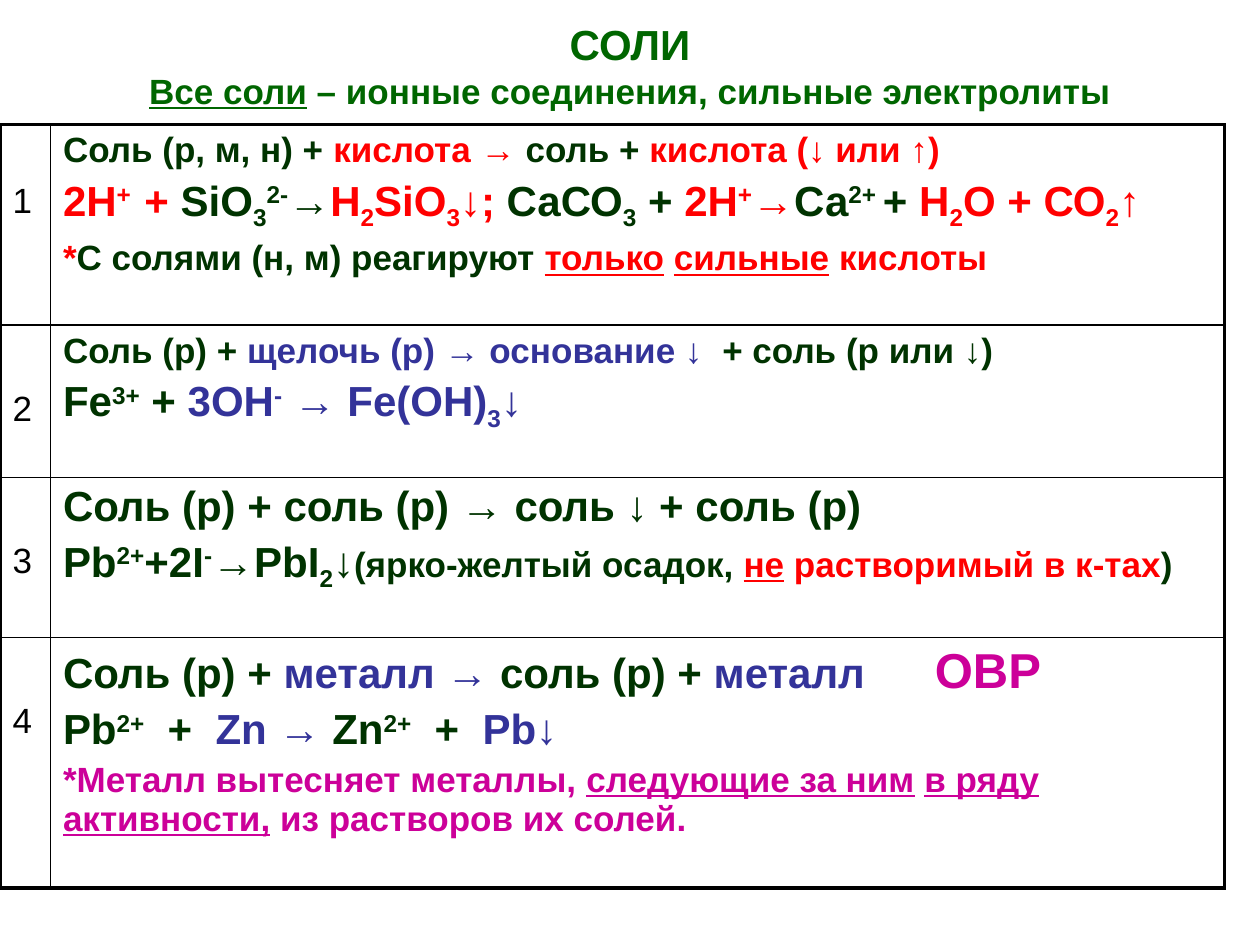
from lxml import etree
from pptx import Presentation
from pptx.dml.color import RGBColor
from pptx.enum.text import MSO_ANCHOR, MSO_AUTO_SIZE, PP_ALIGN
from pptx.oxml.ns import qn
from pptx.util import Inches, Pt

MIDDLE, CENTER, NO_AUTOFIT = MSO_ANCHOR.MIDDLE, PP_ALIGN.CENTER, MSO_AUTO_SIZE.NONE

THEME = {
    "font": "Arial",
    "colors": {"title": "006600", "salt": "003300", "acid": "FF0000",
               "metal": "333399", "redox": "CC0099", "black": "000000"},
    "sizes": {"body": 20, "formula": 24, "label": 28},
    "outer": 2.25,
    "inner": 1,
}
BASELINES = {"sub": "-25000", "sup": "30000"}

TITLE = [
    ("formula", [("СОЛИ", "title")]),
    ("body", [("Все соли", "title", "underline"), (" ", "metal"),
              ("– ионные соединения, сильные электролиты", "title")]),
]

REACTIONS = [
    [
        ("body", [("Соль (р, м, н) +", "salt"), (" кислота → ", "acid"),
                  ("соль +", "salt"), (" кислота (↓ или ↑)", "acid")]),
        ("formula", [("2H", "acid"), ("+  ", "acid", "sup"), ("+ ", "acid"),
                     ("SiO", "salt"), ("3", "salt", "sub"), ("2-", "salt", "sup"),
                     ("→", "salt"), ("H", "acid"), ("2", "acid", "sub"),
                     ("SiO", "acid"), ("3", "acid", "sub"), ("↓; ", "acid"),
                     ("СаСО", "salt"), ("3", "salt", "sub"), (" + ", "salt"),
                     ("2Н", "acid"), ("+", "acid", "sup"), ("→", "acid"),
                     ("Са", "salt"), ("2+ ", "salt", "sup"), ("+ ", "salt"),
                     ("Н", "acid"), ("2", "acid", "sub"), ("О + СО", "acid"),
                     ("2", "acid", "sub"), ("↑", "acid")]),
        ("body", [("*", "acid"), ("С солями (н, м) реагируют ", "salt"),
                  ("только", "acid", "underline"), (" ", "acid"),
                  ("сильные", "acid", "underline"), (" ", "metal"),
                  ("кислоты", "acid")]),
    ],
    [
        ("body", [("Соль (р) + ", "salt"), ("щелочь (р) → основание ↓  ", "metal"),
                  ("+ соль (р или ↓)", "salt")]),
        ("formula", [("Fe", "salt"), ("3+", "salt", "sup"), (" +", "salt"),
                     (" 3OH", "metal"), ("-", "metal", "sup"),
                     (" → Fe(OH)", "metal"), ("3", "metal", "sub"), ("↓", "metal")]),
    ],
    [
        ("formula", [("Соль (р) + соль (р) → соль ↓ + соль (р)", "salt")]),
        ("formula", [("Pb", "salt"), ("2+", "salt", "sup"), ("+2I", "salt"),
                     ("-", "salt", "sup"), ("→PbI", "salt"), ("2", "salt", "sub"),
                     ("↓", "salt"), ("(ярко-желтый осадок, ", "salt", "body"),
                     ("не", "acid", "body", "underline"),
                     (" растворимый в к-тах", "acid", "body"), (")", "salt", "body")]),
    ],
    [
        ("formula", [("Соль (р) + ", "salt"), ("металл → ", "metal"),
                     ("соль (р) + ", "salt"), ("металл\t", "metal"),
                     ("ОВР", "redox", "label")]),
        ("formula", [("Pb", "salt"), ("2+", "salt", "sup"), ("  +", "salt"),
                     ("  Zn → ", "metal"), ("Zn", "salt"), ("2+", "salt", "sup"),
                     ("  +", "salt"), ("  Pb↓", "metal")]),
        ("body", [("*Металл вытесняет металлы, ", "redox"),
                  ("следующие за ним", "redox", "underline"), (" ", "redox"),
                  ("в ряду", "redox", "underline"), (" ", "redox"),
                  ("активности,", "redox", "underline"),
                  (" из растворов их солей.", "redox")]),
    ],
]

COLUMN_WIDTHS = [0.4, 9.32]
ROW_HEIGHTS = [1.59, 1.21, 1.27, 1.99]
NUMBER_OFFSETS = [0.45, 0.51, 0.51, 0.51]
TABLE_LEFT, TABLE_TOP = 0, 0.99
LABEL_TAB = 6.92


def add_runs(paragraph, size, runs, bold=True):
    for text, color, *marks in runs:
        run = paragraph.add_run()
        run.text = text
        font = run.font
        run_size = next((mark for mark in marks if mark in THEME["sizes"]), size)
        font.size = Pt(THEME["sizes"][run_size])
        font.name = THEME["font"]
        font.bold = bold
        font.underline = "underline" in marks
        font.color.rgb = RGBColor.from_string(THEME["colors"][color])
        for mark in marks:
            if mark in BASELINES:
                font._element.set("baseline", BASELINES[mark])


def fill_cell(cell, lines, bold=True):
    frame = cell.text_frame
    for index, (size, runs) in enumerate(lines):
        paragraph = frame.add_paragraph() if index else frame.paragraphs[0]
        if index:
            paragraph.space_before = Pt(0.2 * THEME["sizes"][size])
        add_runs(paragraph, size, runs, bold)
        if any("\t" in text for text, *_ in runs):
            tabs = etree.SubElement(paragraph._p.get_or_add_pPr(), qn("a:tabLst"))
            etree.SubElement(tabs, qn("a:tab"), pos=str(Inches(LABEL_TAB)), algn="l")


def set_borders(cell, outer_edges):
    cell.fill.background()
    properties = cell._tc.get_or_add_tcPr()
    for index, edge in enumerate("LRTB"):
        width = THEME["outer"] if edge in outer_edges else THEME["inner"]
        line = etree.Element(qn(f"a:ln{edge}"), w=str(Pt(width)))
        fill = etree.SubElement(line, qn("a:solidFill"))
        etree.SubElement(fill, qn("a:srgbClr"), val=THEME["colors"]["black"])
        properties.insert(index, line)


def add_title(slide):
    title = slide.shapes.title
    title.left, title.top = Inches(0.5), Inches(0.3)
    title.width, title.height = Inches(9), Inches(0.77)
    frame = title.text_frame
    frame.word_wrap = True
    frame.auto_size = NO_AUTOFIT
    frame.vertical_anchor = MIDDLE
    frame.margin_top, frame.margin_bottom = Inches(0.05), Inches(0.39)
    paragraph = frame.paragraphs[0]
    paragraph.alignment = CENTER
    for index, (size, runs) in enumerate(TITLE):
        if index:
            paragraph.add_line_break()
        add_runs(paragraph, size, runs)


def add_reaction_table(slide):
    last_row = len(REACTIONS) - 1
    table = slide.shapes.add_table(
        len(REACTIONS), len(COLUMN_WIDTHS), Inches(TABLE_LEFT), Inches(TABLE_TOP),
        Inches(sum(COLUMN_WIDTHS)), Inches(sum(ROW_HEIGHTS))).table
    table.first_row = table.horz_banding = False
    for column, width in zip(table.columns, COLUMN_WIDTHS):
        column.width = Inches(width)
    for index, reaction in enumerate(REACTIONS):
        table.rows[index].height = Inches(ROW_HEIGHTS[index])
        number_cell, reaction_cell = table.cell(index, 0), table.cell(index, 1)
        number_cell.margin_top = Inches(NUMBER_OFFSETS[index])
        fill_cell(number_cell, [("body", [(str(index + 1), "black")])], bold=False)
        fill_cell(reaction_cell, reaction)
        edges = ("T" if index == 0 else "") + ("B" if index == last_row else "")
        set_borders(number_cell, edges + "L")
        set_borders(reaction_cell, edges + "R")


def main():
    presentation = Presentation()
    presentation.slide_width, presentation.slide_height = Inches(10), Inches(7.5)
    slide = presentation.slides.add_slide(presentation.slide_layouts[5])
    add_title(slide)
    add_reaction_table(slide)
    presentation.save("out.pptx")


if __name__ == "__main__":
    main()
